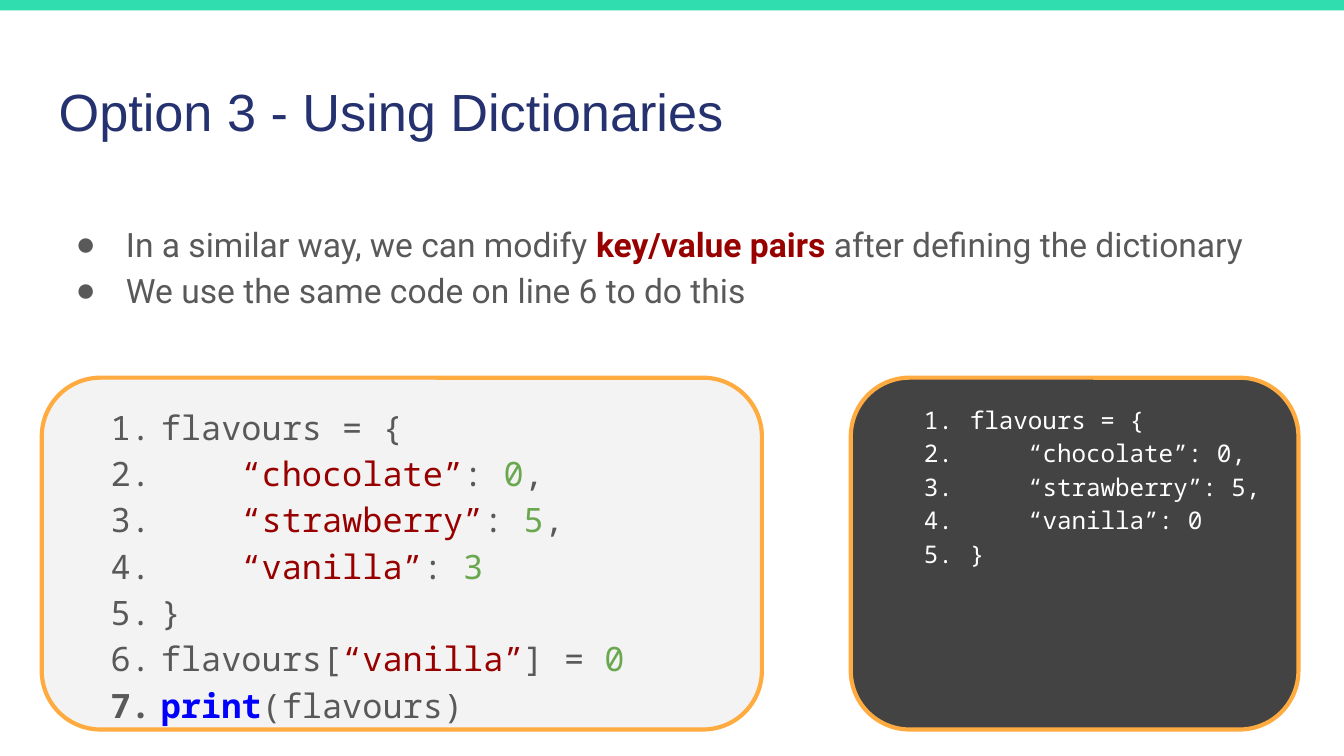
from lxml.etree import SubElement as Sub
from pptx import Presentation as Deck
from pptx.dml.color import RGBColor as Rgb
from pptx.enum.shapes import MSO_SHAPE as Kind
from pptx.enum.text import MSO_ANCHOR as Anchor, MSO_AUTO_SIZE as Fit, PP_ALIGN as Align
from pptx.oxml.ns import qn
from pptx.util import Cm, Pt

HUES = {
    "navy": "25326F", "mint": "30DDAE", "gray": "595959", "red": "980000",
    "green": "6AA84F", "blue": "0000FF", "white": "FFFFFF",
    "pale": "F3F3F3", "dark": "434343", "gold": "FFAB40",
}
PAD = Cm(0.25)
FRAME = {
    "word_wrap": True, "auto_size": Fit.NONE, "vertical_anchor": Anchor.TOP,
    "margin_left": PAD, "margin_right": PAD, "margin_top": PAD, "margin_bottom": PAD,
}
TIGHT = {"alignment": Align.LEFT, "space_before": Pt(0), "space_after": Pt(0)}
LIST = TIGHT | {"line_spacing": 1.15}
TITLE = {"name": "Arial", "size": Pt(28), "bold": False}
BODY = {"name": "Roboto", "size": Pt(18)}
CODE = {"name": "Noto Sans Mono", "size": Pt(18)}
SMALL = CODE | {"size": Pt(13)}
DOT = ("buChar", {"char": "●"})
COUNT = ("buAutoNum", {"type": "arabicPeriod"})
STRONG = ("red", "blue")

POINTS = [
    (0, [("In a similar way, we can modify ", "gray"), ("key/value pairs ", "red", True),
         ("after defining the dictionary", "gray")]),
    (0, [("We use the same code on line 6 to do this", "gray")]),
]


def pair(key, value, end=","):
    parts = [(f"“{key}”", "red"), (": ", "gray"), (value, "green")]
    return 1, parts + ([(end, "gray")] if end else [])


SOURCE = [
    (0, [("flavours = {", "gray")]),
    pair("chocolate", "0"),
    pair("strawberry", "5"),
    pair("vanilla", "3", ""),
    (0, [("}", "gray")]),
    (0, [("flavours[", "gray"), ("“vanilla”", "red"), ("] = ", "gray"), ("0", "green")]),
    (0, [("print", "blue", True), ("(flavours)", "gray")]),
]
RESULT = [
    (step, [(text, "white")]) for step, text in [
        (0, "flavours = {"), (1, "“chocolate”: 0,"), (1, "“strawberry”: 5,"),
        (1, "“vanilla”: 0"), (0, "}"),
    ]
]


def apply(item, style):
    for name, value in style.items():
        setattr(item, name, value)


def place(shape, box):
    apply(shape, dict(zip(("left", "top", "width", "height"), map(Cm, box))))


def paint(color, hue):
    color.rgb = Rgb.from_string(HUES[hue])


def add_run(para, font, text, hue, bold=False):
    run = para.add_run()
    run.text = text
    apply(run.font, font | {"bold": bold})
    paint(run.font.color, hue)


def add_mark(para, mark, hue, left, hang):
    props = para._p.get_or_add_pPr()
    props.set("marL", str(Cm(left)))
    props.set("indent", str(-Cm(hang)))
    color = Sub(props, qn("a:buClr"))
    Sub(color, qn("a:srgbClr"), val=HUES[hue])
    tag, values = mark
    Sub(props, qn("a:" + tag), **values)


def fill_list(shape, lines, font, mark, hue, left, hang):
    frame = shape.text_frame
    apply(frame, FRAME)
    tab = 4 * 0.6 * font["size"].cm
    for at, (step, parts) in enumerate(lines):
        para = frame.add_paragraph() if at else frame.paragraphs[0]
        apply(para, LIST)
        add_mark(para, mark, hue, left + step * tab, hang + step * tab)
        for part in parts:
            add_run(para, font, *part)


def add_block(slide, kind, box, fill, line=None):
    shape = slide.shapes.add_shape(kind, *map(Cm, box))
    shape.shadow.inherit = False
    shape.fill.solid()
    paint(shape.fill.fore_color, fill)
    if line:
        paint(shape.line.color, line)
        shape.line.width = Pt(2.25)
    else:
        shape.line.fill.background()
    return shape


def add_code(slide, left, width, wide, fill, lines, font, hue, hang):
    panel = add_block(slide, Kind.ROUNDED_RECTANGLE, (left, 7.14, width, 6.65), fill, "gold")
    panel.adjustments[0] = 0.167
    text = slide.shapes.add_textbox(*map(Cm, (left, 7.32, wide, 6.48)))
    fill_list(text, lines, font, COUNT, hue, 2, hang)


def add_title(slide, text):
    title = slide.shapes.title
    place(title, (0.86, 1.24, 23.67, 1.6))
    apply(title.text_frame, FRAME)
    para = title.text_frame.paragraphs[0]
    apply(para, TIGHT)
    add_run(para, TITLE, text, "navy")


def main():
    deck = Deck()
    apply(deck, {"slide_width": Cm(25.4), "slide_height": Cm(14.29)})
    slide = deck.slides.add_slide(deck.slide_layouts[1])
    add_title(slide, "Option 3 - Using Dictionaries")
    add_block(slide, Kind.RECTANGLE, (-0.03, 0, 25.46, 0.2), "mint")
    body = slide.placeholders[1]
    place(body, (0.86, 3.86, 23.67, 2.16))
    fill_list(body, POINTS, BODY, DOT, "gray", 1.27, 0.95)
    add_code(slide, 0.79, 13.61, 13.79, "pale", SOURCE, CODE, "gray", 0.95)
    add_code(slide, 16.08, 8.46, 8.36, "dark", RESULT, SMALL, "white", 0.87)
    deck.save("out.pptx")


if __name__ == "__main__":
    main()
